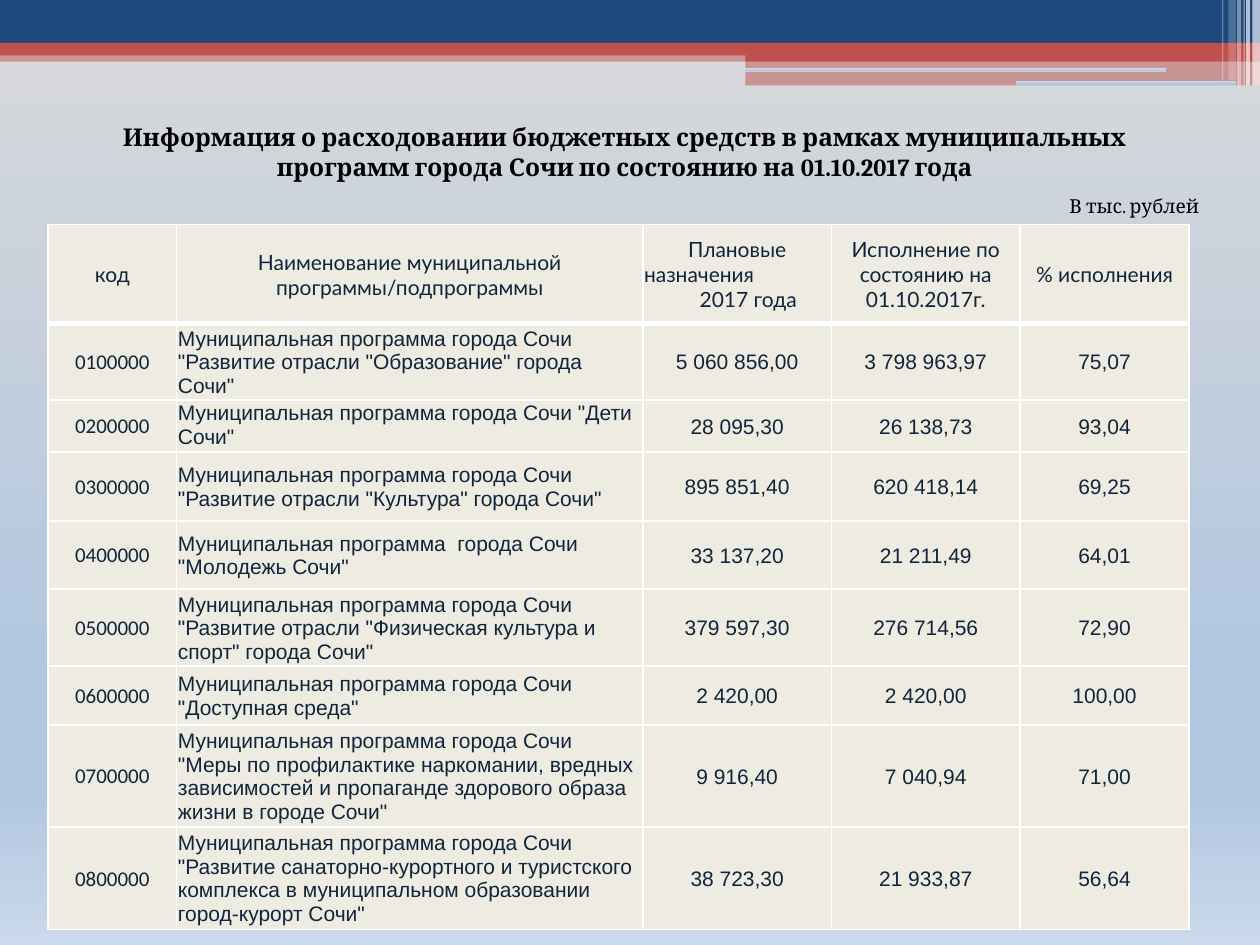
"""Builds the slide on spending under the municipal programmes of Sochi."""
from dataclasses import dataclass, field

from lxml.etree import SubElement
from pptx import Presentation
from pptx.dml.color import RGBColor
from pptx.enum.shapes import MSO_SHAPE
from pptx.enum.text import MSO_ANCHOR, MSO_AUTO_SIZE, PP_ALIGN
from pptx.oxml.ns import qn
from pptx.slide import Slide
from pptx.util import Pt

COLORS = {
    "navy": "1F497D", "red": "C0504D", "white": "FFFFFF", "black": "000000",
    "cream": "EEECE1", "ink": "0F243E",
    "mist": "D9D9D9", "sky": "B0C6E1", "haze": "CAD9EB",
}
BACKDROP = [(0, "mist"), (74, "sky"), (83, "sky"), (100, "haze")]

HEADINGS = [
    "код",
    "Наименование муниципальной программы/подпрограммы",
    "Плановые\nназначения\n2017 года",
    "Исполнение по состоянию на 01.10.2017г.",
    "% исполнения",
]
PROGRAMMES = [
    ("0100000", 'Муниципальная программа города Сочи "Развитие отрасли "Образование" города Сочи"',
     "5 060 856,00", "3 798 963,97", "75,07"),
    ("0200000", 'Муниципальная программа города Сочи "Дети Сочи"',
     "28 095,30", "26 138,73", "93,04"),
    ("0300000", 'Муниципальная программа города Сочи "Развитие отрасли "Культура" города Сочи"',
     "895 851,40", "620 418,14", "69,25"),
    ("0400000", 'Муниципальная программа  города Сочи "Молодежь Сочи"',
     "33 137,20", "21 211,49", "64,01"),
    ("0500000", 'Муниципальная программа города Сочи "Развитие отрасли "Физическая культура и спорт" города Сочи"',
     "379 597,30", "276 714,56", "72,90"),
    ("0600000", 'Муниципальная программа города Сочи "Доступная среда"',
     "2 420,00", "2 420,00", "100,00"),
    ("0700000", 'Муниципальная программа города Сочи "Меры по профилактике наркомании, вредных '
     'зависимостей и пропаганде здорового образа жизни в городе Сочи"',
     "9 916,40", "7 040,94", "71,00"),
    ("0800000", 'Муниципальная программа города Сочи "Развитие санаторно-курортного и туристского '
     'комплекса в муниципальном образовании город-курорт Сочи"',
     "38 723,30", "21 933,87", "56,64"),
]
COLUMN_WIDTHS = [73.6, 266.4, 107.8, 107.8, 96.6]
ROW_HEIGHTS = [56.6, 39.6, 29.5, 39.6, 38.9, 40.3, 33.8, 46.8, 56.6]

BANDS = [
    (0, 28.8, 720, 6.5, "red", 50),
    (0, 0, 720, 24.5, "navy", 100),
    (0, 24.5, 720, 7.2, "red", 100),
    (426, 28.1, 294, 7, "red", 100),
    (426, 34.6, 294, 14.2, "red", 50),
]
SLITS = [(425.5, 38.9, 241.2, 2.2), (580.3, 46.1, 126, 2.6)]
STRIPES = [
    (715.7, 4.3, 49, 65), (712.1, 2.2, 49, 65), (710.6, 0.7, 49, 60),
    (707, 2.2, 49, 40), (702, 4.3, 46, 20), (698.4, 0.7, 46, 30),
]


def rgb(color):
    return RGBColor.from_string(COLORS[color])


def write(frame, text, *, font, size, color, bold=False, align=PP_ALIGN.LEFT):
    frame.word_wrap = True
    for number, line in enumerate(text.split("\n")):
        paragraph = frame.add_paragraph() if number else frame.paragraphs[0]
        paragraph.alignment = align
        run = paragraph.add_run()
        run.text = line
        run.font.name, run.font.size, run.font.bold = font, Pt(size), bold
        run.font.color.rgb = rgb(color)


def fill_backdrop(fill, element):
    fill.gradient()
    fill.gradient_angle = 270
    stops = element.find(".//" + qn("a:gsLst"))
    for stop in list(stops):
        stops.remove(stop)
    for percent, color in BACKDROP:
        stop = SubElement(stops, qn("a:gs"), pos=str(percent * 1000))
        SubElement(stop, qn("a:srgbClr"), val=COLORS[color])


@dataclass
class Sheet:
    slide: Slide
    heading: dict = field(default_factory=lambda: {"font": "Cambria", "color": "black"})
    body: dict = field(default_factory=lambda: {"size": 12, "color": "ink"})

    def backdrop(self):
        fill_backdrop(self.slide.background.fill, self.slide.element)

    def band(self, left, top, width, height, color=None, opacity=100, kind=MSO_SHAPE.RECTANGLE):
        band = self.slide.shapes.add_shape(kind, Pt(left), Pt(top), Pt(width), Pt(height))
        band.shadow.inherit = False
        band.line.fill.background()
        if color is None:
            fill_backdrop(band.fill, band.element)
            return
        band.fill.solid()
        band.fill.fore_color.rgb = rgb(color)
        if opacity < 100:
            tint = band.element.spPr.find(".//" + qn("a:srgbClr"))
            SubElement(tint, qn("a:alpha"), val=str(opacity * 1000))

    def title(self, text, left, top, width, height):
        title = self.slide.shapes.title
        title.left, title.top, title.width, title.height = map(Pt, (left, top, width, height))
        title.text_frame.vertical_anchor = MSO_ANCHOR.TOP
        title.text_frame.auto_size = MSO_AUTO_SIZE.SHAPE_TO_FIT_TEXT
        write(title.text_frame, text, size=14, bold=True, align=PP_ALIGN.CENTER, **self.heading)

    def caption(self, text, left, top, width, height):
        caption = self.slide.shapes.add_textbox(Pt(left), Pt(top), Pt(width), Pt(height))
        write(caption.text_frame, text, size=11, **self.heading)

    def cell(self, cell, text, font, align, anchor, borders):
        cell.margin_left = cell.margin_right = cell.margin_top = Pt(0.7)
        cell.margin_bottom = Pt(0)
        cell.vertical_anchor = anchor
        for side, weight in borders.items():
            line = SubElement(cell._tc.get_or_add_tcPr(), qn("a:ln" + side), w=str(Pt(weight)))
            SubElement(SubElement(line, qn("a:solidFill")), qn("a:srgbClr"), val=COLORS["white"])
        cell.fill.solid()
        cell.fill.fore_color.rgb = rgb("cream")
        write(cell.text_frame, text, font=font, align=align, **self.body)

    def table(self, rows, left, top):
        table = self.slide.shapes.add_table(
            len(rows), len(COLUMN_WIDTHS), Pt(left), Pt(top),
            Pt(sum(COLUMN_WIDTHS)), Pt(sum(ROW_HEIGHTS))).table
        table.horz_banding = False
        for column, width in zip(table.columns, COLUMN_WIDTHS):
            column.width = Pt(width)
        for r, (row, height) in enumerate(zip(rows, ROW_HEIGHTS)):
            table.rows[r].height = Pt(height)
            borders = {"L": 1, "R": 1, "T": 3 if r == 1 else 1, "B": 3 if r == 0 else 1}
            for c, text in enumerate(row):
                font = "Lato" if r == 0 else "Calibri" if c == 0 else "Arial"
                align = PP_ALIGN.LEFT if r and c == 1 else PP_ALIGN.CENTER
                anchor = MSO_ANCHOR.TOP if (r, c) == (2, 1) else MSO_ANCHOR.MIDDLE
                self.cell(table.cell(r, c), text, font, align, anchor, borders)
        return table


def main():
    deck = Presentation()
    deck.slide_width, deck.slide_height = Pt(720), Pt(540)
    sheet = Sheet(deck.slides.add_slide(deck.slide_layouts[5]))
    sheet.backdrop()
    for band in BANDS:
        sheet.band(*band)
    for slit in SLITS:
        sheet.band(*slit, kind=MSO_SHAPE.ROUNDED_RECTANGLE)
    for left, width, height, opacity in STRIPES:
        sheet.band(left, 0, width, height, "white", opacity)

    spending = sheet.table([HEADINGS, *PROGRAMMES], 27.4, 128.2)
    _, appropriations, year = spending.cell(0, 2).text_frame.paragraphs
    appropriations.alignment = PP_ALIGN.LEFT
    year._p.get_or_add_pPr().set("marL", str(Pt(12.6)))

    sheet.title("Информация о расходовании бюджетных средств в рамках муниципальных "
                "программ города Сочи по состоянию на 01.10.2017 года", 36.7, 66.2, 640.8, 41)
    sheet.caption("В тыс. рублей", 604, 107.3, 113, 20.9)
    deck.save("out.pptx")


if __name__ == "__main__":
    main()
